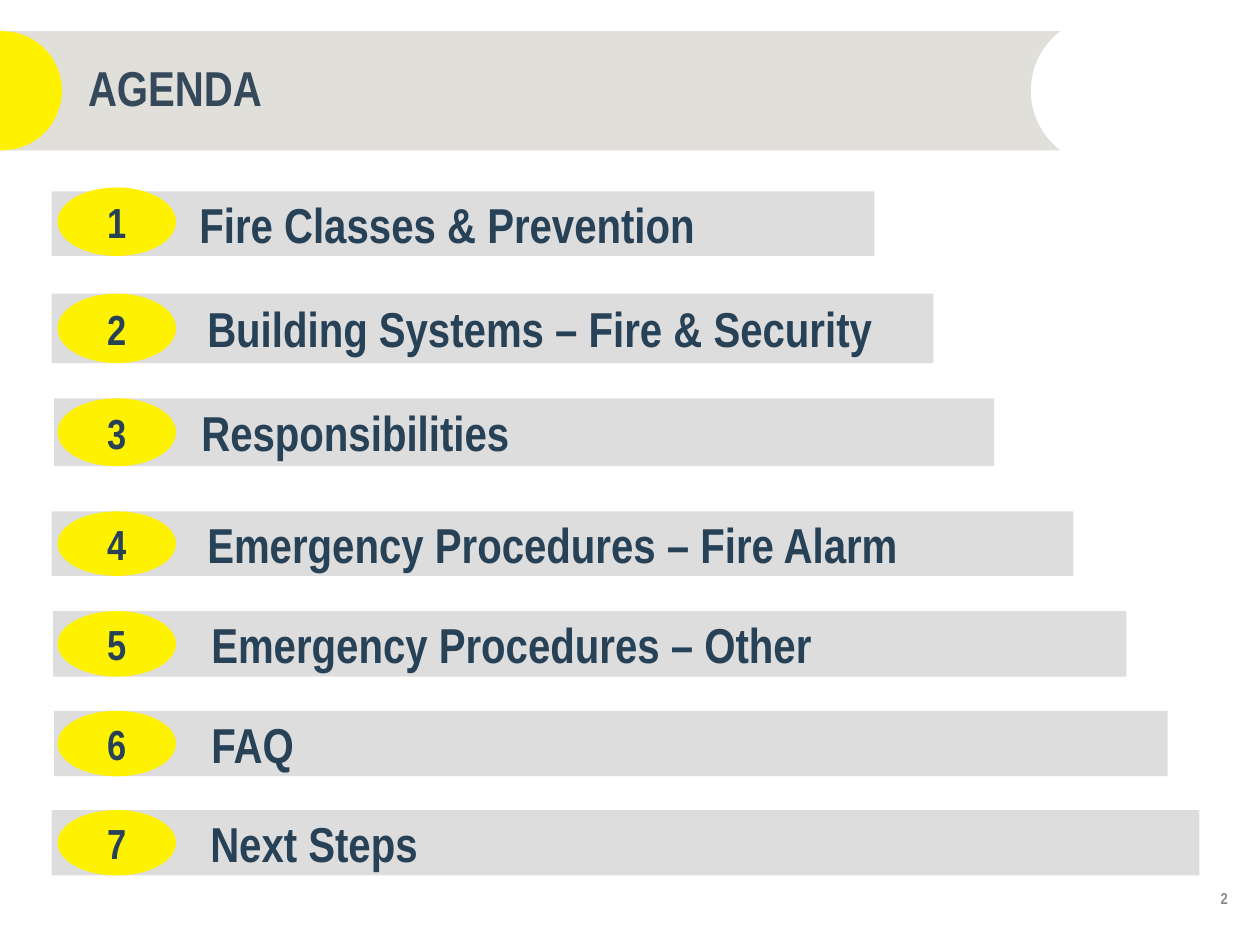
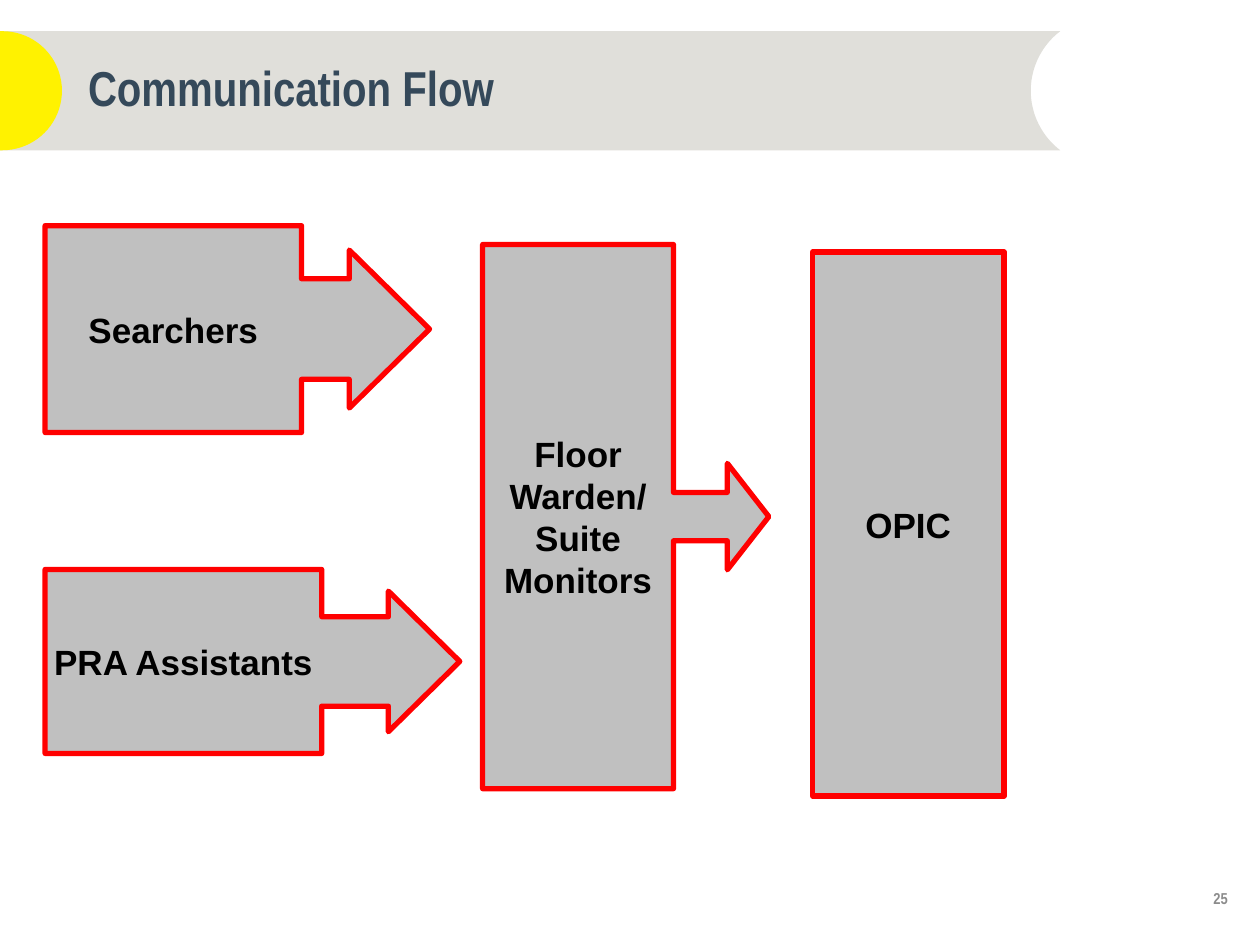
import math

import pptx
import pptx.util
import pptx.dml.color
import pptx.enum.shapes
import pptx.enum.text

Cm, Pt = pptx.util.Cm, pptx.util.Pt
KIND = pptx.enum.shapes.MSO_SHAPE
ALIGN = pptx.enum.text.PP_ALIGN
MIDDLE = pptx.enum.text.MSO_ANCHOR.MIDDLE

HUES = {
    "band": "E0DFDA", "yellow": "FFF200", "title": "35495A",
    "bar": "DDDDDD", "navy": "274157", "box": "C0C0C0",
    "edge": "FF0000", "black": "000000", "page": "8C8C8C",
}
FONTS = {
    "title": {"name": "Arial Narrow", "size": Pt(28), "bold": True},
    "badge": {"name": "Arial Narrow", "size": Pt(24), "bold": True},
    "box": {"name": "Arial", "size": Pt(20), "bold": True},
    "page": {"name": "Arial Narrow", "size": Pt(9), "bold": True},
}

# All lengths are in centimetres.
# Topic, bar left, top, width, height, start of the text, top of the badge
AGENDA = [
    ("Fire Classes & Prevention", 1.04, 3.86, 16.59, 1.3, 4.02, 3.78),
    ("Building Systems – Fire & Security", 1.04, 5.92, 17.78, 1.4, 4.18, 5.92),
    ("Responsibilities", 1.09, 8.03, 18.95, 1.37, 4.06, 8.03),
    ("Emergency Procedures – Fire Alarm", 1.04, 10.31, 20.6, 1.3, 4.18, 10.31),
    ("Emergency Procedures – Other", 1.07, 12.32, 21.64, 1.32, 4.26, 12.32),
    ("FAQ", 1.09, 14.33, 22.45, 1.32, 4.26, 14.33),
    ("Next Steps", 1.04, 16.33, 23.14, 1.32, 4.24, 16.33),
]
BADGE = {"left": 1.16, "wide": 2.39}

# Lines of text, place, callout proportions (none for a plain box)
WIDE = (0.486, 0.382, 0.388, 0.667)
SLIM = (0.169, 0.186, 0.145, 0.667)
FLOW = [
    (["Searchers"], (0.91, 4.55, 7.75, 4.17), WIDE),
    (["PRA Assistants"], (0.91, 11.48, 8.36, 3.71), WIDE),
    (["Floor", "Warden/", "Suite", "Monitors"], (9.73, 4.93, 5.77, 10.97), SLIM),
    (["OPIC"], (16.38, 5.08, 3.86, 10.97), ()),
]

TITLE = (1.52, 0.99, 17.75, 1.68)
PAGE = (19.28, 17.6, 5.72, 1.02)
BAND = {"top": 0.63, "mid": 1.83, "half": 1.2}
DISC = {"x": 0.05, "r": 1.2}
NOTCH = {"x": 22.29, "r": 1.51}


def hue(name):
    return pptx.dml.color.RGBColor.from_string(HUES[name])


def paint(shape, fill, line=None):
    shape.shadow.inherit = False
    shape.fill.solid()
    shape.fill.fore_color.rgb = hue(fill)
    if line:
        shape.line.color.rgb = hue(line)
        shape.line.width = Pt(3)
    else:
        shape.line.fill.background()


def write(shape, lines, font, color, align=ALIGN.CENTER, wrap=True):
    frame = shape.text_frame
    frame.text = "\n".join(lines)
    frame.vertical_anchor = MIDDLE
    frame.word_wrap = wrap
    for para in frame.paragraphs:
        para.alignment = align
        for key, value in FONTS[font].items():
            setattr(para.font, key, value)
        para.font.color.rgb = hue(color)


def add(slide, kind, place, fill, line=None):
    shape = slide.shapes.add_shape(kind, *map(Cm, place))
    paint(shape, fill, line)
    return shape


def arc(x, r, start, end, steps=40):
    """Points of an arc about the middle of the band; degrees run clockwise."""
    turns = [math.radians(start + (end - start) * i / steps) for i in range(steps + 1)]
    return [(x + r * math.cos(t), BAND["mid"] + r * math.sin(t)) for t in turns]


def outline(slide, points, fill):
    first, *rest = [(Cm(x), Cm(y)) for x, y in points]
    pen = slide.shapes.build_freeform(*first)
    pen.add_line_segments(rest, close=True)
    shape = pen.convert_to_shape()
    paint(shape, fill)
    return shape


def decorate(slide):
    """Draw the title band and hand it to the layout, so all slides share it."""
    low = BAND["top"] + 2 * BAND["half"]
    ends = [(0, low), (0, BAND["top"])]
    bend = math.degrees(math.asin(BAND["half"] / NOTCH["r"]))
    notch = arc(NOTCH["x"], NOTCH["r"], 180 + bend, 180 - bend)
    disc = arc(DISC["x"], DISC["r"], -90, 90)
    tree = slide.slide_layout.shapes.element
    for points, fill in ((notch, "band"), (disc, "yellow")):
        tree.append(outline(slide, points + ends, fill).element)


def start(deck, title, page):
    slide = deck.slides.add_slide(deck.slide_layouts[5])
    head = slide.shapes.title
    head.left, head.top, head.width, head.height = map(Cm, TITLE)
    write(head, [title], "title", "title", ALIGN.LEFT)
    head.text_frame.auto_size = pptx.enum.text.MSO_AUTO_SIZE.NONE
    head.text_frame.paragraphs[0].line_spacing = 0.9
    foot = slide.shapes.add_textbox(*map(Cm, PAGE))
    write(foot, [str(page)], "page", "page", ALIGN.RIGHT)
    return slide


def agenda(slide):
    for number, row in enumerate(AGENDA, 1):
        topic, left, top, wide, high, text, peak = row
        bar = add(slide, KIND.RECTANGLE, (left, top, wide, high), "bar")
        write(bar, [topic], "title", "navy", ALIGN.LEFT)
        bar.text_frame.margin_left = Cm(text - left)
        place = (BADGE["left"], peak, BADGE["wide"], top + high - peak)
        badge = add(slide, KIND.OVAL, place, "yellow")
        write(badge, [str(number)], "badge", "navy")


def flow(slide):
    for lines, place, ratios in FLOW:
        kind = KIND.RIGHT_ARROW_CALLOUT if ratios else KIND.RECTANGLE
        box = add(slide, kind, place, "box", "edge")
        for i, ratio in enumerate(ratios):
            box.adjustments[i] = ratio
        write(box, lines, "box", "black", wrap=False)


def main():
    deck = pptx.Presentation()
    deck.slide_width, deck.slide_height = Cm(25.4), Cm(19.05)
    first = start(deck, "AGENDA", 2)
    decorate(first)
    agenda(first)
    flow(start(deck, "Communication Flow", 25))
    deck.save("out.pptx")


if __name__ == "__main__":
    main()
